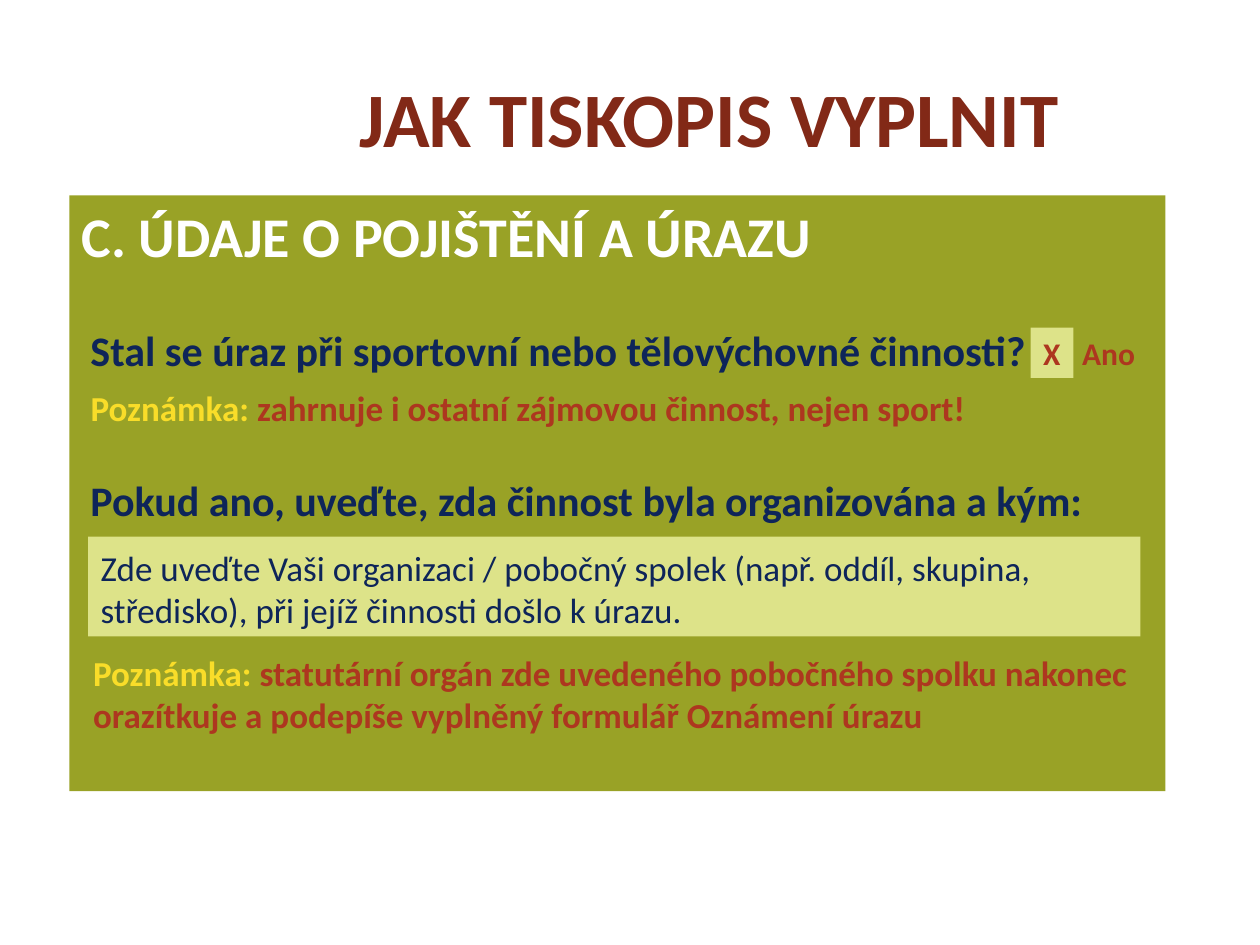
from pptx import Presentation
from pptx.dml.color import RGBColor
from pptx.enum.shapes import MSO_SHAPE
from pptx.enum.text import MSO_ANCHOR, PP_ALIGN
from pptx.util import Inches, Pt

COLORS = {
    "title": "822917",
    "panel": "99A226",
    "field": "DDE389",
    "white": "FFFFFF",
    "navy": "0E2559",
    "red": "AD371F",
    "yellow": "F9DD29",
}
COLUMNS, ROWS = 100, 75
SLIDE_WIDTH, SLIDE_HEIGHT = Inches(10), Inches(7.5)


def grid(left, top, width, height):
    """Turn columns and rows into slide lengths."""
    column, row = SLIDE_WIDTH / COLUMNS, SLIDE_HEIGHT / ROWS
    return [round(n * unit) for n, unit in
            ((left, column), (top, row), (width, column), (height, row))]


def write(frame, parts, size, bold=True, wrap=True):
    """Fill a frame with one paragraph of (text, colour) parts."""
    frame.word_wrap = wrap
    paragraph = frame.paragraphs[0]
    paragraph.alignment = PP_ALIGN.LEFT
    for text, color in parts:
        run = paragraph.add_run()
        run.text = text
        run.font.name = "Calibri"
        run.font.size = Pt(size)
        run.font.bold = bold
        run.font.color.rgb = RGBColor.from_string(COLORS[color])
    return frame


def add_label(slide, area, parts, size, wrap=True):
    """Add bold text without a background."""
    label = slide.shapes.add_textbox(*grid(*area))
    return write(label.text_frame, parts, size, wrap=wrap)


def add_panel(slide, area, fill, parts, size, bold=True):
    """Add a filled rectangle with text starting at its top."""
    panel = slide.shapes.add_shape(MSO_SHAPE.RECTANGLE, *grid(*area))
    panel.shadow.inherit = False
    panel.fill.solid()
    panel.fill.fore_color.rgb = RGBColor.from_string(COLORS[fill])
    panel.line.fill.background()
    panel.text_frame.vertical_anchor = MSO_ANCHOR.TOP
    return write(panel.text_frame, parts, size, bold)


def add_title(slide, text):
    """Add the centred slide title."""
    title = add_label(slide, (17.6, 3, 77.4, 12.5), [(text, "title")], 44)
    title.vertical_anchor = MSO_ANCHOR.MIDDLE
    title.paragraphs[0].alignment = PP_ALIGN.CENTER


def add_note(slide, area, text):
    """Add a remark with its highlighted lead word."""
    add_label(slide, area, [("Poznámka: ", "yellow"), (text, "red")], 20)


def main():
    """Build the slide and save it."""
    deck = Presentation()
    deck.slide_width, deck.slide_height = SLIDE_WIDTH, SLIDE_HEIGHT
    slide = deck.slides.add_slide(deck.slide_layouts[6])

    add_title(slide, "JAK TISKOPIS VYPLNIT")
    add_panel(slide, (5.5, 15.5, 87, 47.3), "panel",
              [("C. ÚDAJE O POJIŠTĚNÍ A ÚRAZU", "white")], 32)

    add_label(slide, (6.2, 25.3, 77, 5),
              [("Stal se úraz při sportovní nebo tělovýchovné činnosti?", "navy")],
              24, wrap=False)
    add_panel(slide, (81.8, 26, 3.4, 4), "field", [("X", "red")], 18)
    add_label(slide, (84.9, 26, 6.2, 4), [("Ano", "red")], 18, wrap=False)
    add_note(slide, (6.2, 30.2, 84.9, 4.4),
             "zahrnuje i ostatní zájmovou činnost, nejen sport!")

    add_label(slide, (6.2, 37.2, 81.6, 5),
              [("Pokud ano, uveďte, zda činnost byla organizována a kým:", "navy")], 24)
    organisation = add_panel(
        slide, (7, 42.6, 83.5, 7.9), "field",
        [("Zde uveďte Vaši organizaci / pobočný spolek (např. oddíl, skupina, "
          "středisko), při jejíž činnosti došlo k úrazu.", "navy")], 20, bold=False)
    organisation.margin_top = Inches(0.08)
    add_note(slide, (6.4, 51.2, 84.9, 7.7),
             "statutární orgán zde uvedeného pobočného spolku nakonec "
             "orazítkuje a podepíše vyplněný formulář Oznámení úrazu")

    deck.save("out.pptx")


if __name__ == "__main__":
    main()
